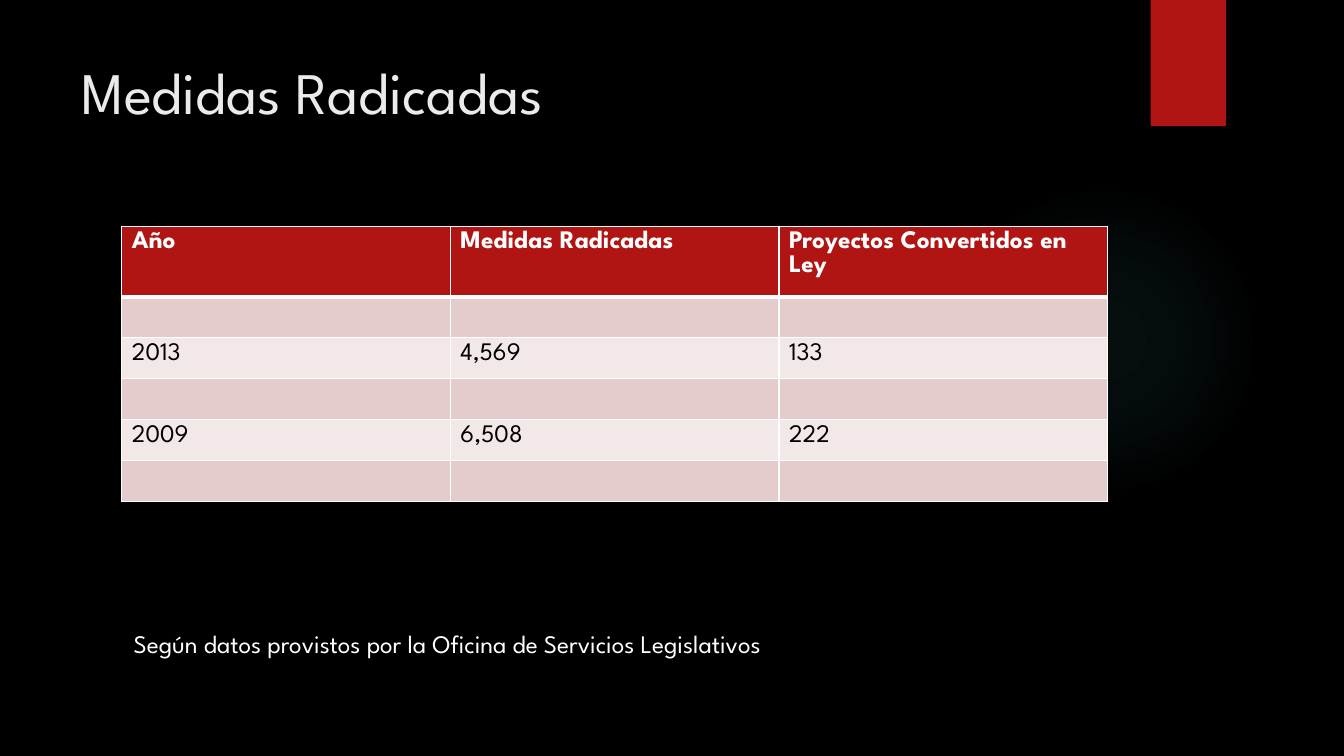
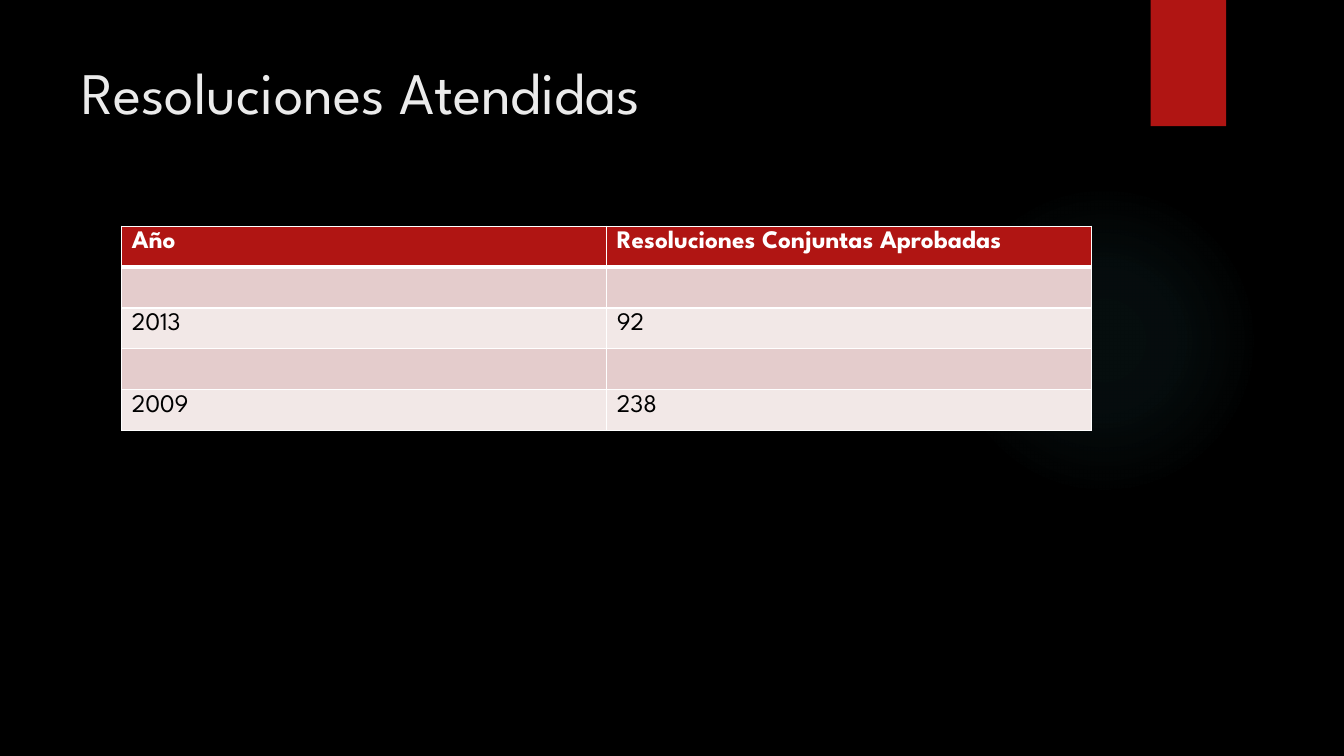
from dataclasses import dataclass

from lxml.etree import SubElement
from pptx import Presentation
from pptx.dml.color import RGBColor
from pptx.enum.shapes import MSO_SHAPE
from pptx.enum.text import MSO_ANCHOR
from pptx.oxml import parse_xml
from pptx.oxml.ns import nsdecls, qn
from pptx.util import Cm, Pt


@dataclass(frozen=True)
class Theme:
    font: str = "League Spartan"
    title_size: int = 42
    body_size: int = 18
    background: str = "000000"
    accent: str = "B01513"
    glow: str = "50B9C1"
    title: str = "EBEBEB"
    light: str = "FFFFFF"
    dark: str = "000000"
    row_fills: tuple = ("F2E8E7", "E4CCCC")
    thin_rule: int = 1
    header_rule: int = 3


class Deck:
    ROW_HEIGHT = Cm(1.03)

    def __init__(self, theme):
        self.theme = theme
        self.prs = Presentation()
        self.prs.slide_width, self.prs.slide_height = Cm(33.87), Cm(19.05)
        self.slide = None

    def add_slide(self, title):
        """Start a slide with the shared background, glow, band and title."""
        self.slide = self.prs.slides.add_slide(self.prs.slide_layouts[6])
        backdrop = self.slide.background.fill
        backdrop.solid()
        backdrop.fore_color.rgb = RGBColor.from_string(self.theme.background)
        self.glow()
        self.band()
        self.text(title, (1.8, 1.27, 26.14, 3.89), self.theme.title_size,
                  self.theme.title)

    def shape(self, kind, box):
        shape = self.slide.shapes.add_shape(kind, *map(Cm, box))
        shape.shadow.inherit = False
        shape.line.fill.background()
        return shape

    def band(self):
        band = self.shape(MSO_SHAPE.RECTANGLE, (29, 0, 1.9, 3.18))
        band.fill.solid()
        band.fill.fore_color.rgb = RGBColor.from_string(self.theme.accent)

    def glow(self):
        glow = self.shape(MSO_SHAPE.OVAL, (23.91, 4.66, 7.83, 7.83))
        stops = "".join(
            f'<a:gs pos="{position * 1000}"><a:srgbClr val="{self.theme.glow}">'
            f'<a:alpha val="{opacity * 1000}"/></a:srgbClr></a:gs>'
            for position, opacity in ((0, 7), (36, 6), (69, 0)))
        gradient = parse_xml(
            f'<a:gradFill {nsdecls("a")}><a:gsLst>{stops}</a:gsLst>'
            '<a:path path="circle"><a:fillToRect l="50000" t="50000" '
            'r="50000" b="50000"/></a:path></a:gradFill>')
        glow._element.spPr.find(qn("a:prstGeom")).addnext(gradient)

    def run(self, paragraph, text, size, color, bold=False):
        run = paragraph.add_run()
        run.text = text
        run.font.name = self.theme.font
        run.font.size = Pt(size)
        run.font.bold = bold
        run.font.color.rgb = RGBColor.from_string(color)

    def text(self, text, box, size, color):
        frame = self.slide.shapes.add_textbox(*map(Cm, box)).text_frame
        frame.word_wrap = True
        frame.vertical_anchor = MSO_ANCHOR.TOP
        self.run(frame.paragraphs[0], text, size, color)

    def note(self, text):
        self.text(text, (3.12, 15.7, 17.63, 1.8), self.theme.body_size,
                  self.theme.light)

    def borders(self, cell, top, bottom):
        properties = cell._tc.get_or_add_tcPr()
        thin = self.theme.thin_rule
        for side, width in (("L", thin), ("R", thin), ("T", top), ("B", bottom)):
            line = SubElement(properties, qn(f"a:ln{side}"), w=str(Pt(width)))
            fill = SubElement(line, qn("a:solidFill"))
            SubElement(fill, qn("a:srgbClr"), val=self.theme.light)

    def table(self, rows, column_width, height):
        """Draw a header row and banded rows; an empty row is a spacer."""
        theme = self.theme
        columns = len(rows[0])
        frame = self.slide.shapes.add_table(
            len(rows), columns, Cm(3.07), Cm(5.7),
            Cm(column_width) * columns, self.ROW_HEIGHT * len(rows))
        frame.height = Cm(height)
        table = frame.table
        for r, values in enumerate(rows):
            header = r == 0
            top = theme.header_rule if r == 1 else theme.thin_rule
            bottom = theme.header_rule if header else theme.thin_rule
            fill = theme.accent if header else theme.row_fills[r % 2]
            for c in range(columns):
                cell = table.cell(r, c)
                self.borders(cell, top, bottom)
                cell.fill.solid()
                cell.fill.fore_color.rgb = RGBColor.from_string(fill)
                if values:
                    self.run(cell.text_frame.paragraphs[0], values[c],
                             theme.body_size,
                             theme.light if header else theme.dark, header)


def main():
    deck = Deck(Theme())

    # Measures filed and enacted
    deck.add_slide("Medidas Radicadas")
    deck.table([
        ("Año", "Medidas Radicadas", "Proyectos Convertidos en Ley"),
        (),
        ("2013", "4,569", "133"),
        (),
        ("2009", "6,508", "222"),
        (),
    ], column_width=8.28, height=6.93)
    deck.note("Según datos provistos por la Oficina de Servicios Legislativos")

    # Joint resolutions
    deck.add_slide("Resoluciones Atendidas")
    deck.table([
        ("Año", "Resoluciones Conjuntas Aprobadas"),
        (),
        ("2013", "92"),
        (),
        ("2009", "238"),
    ], column_width=12.22, height=5.15)

    deck.prs.save("out.pptx")


if __name__ == "__main__":
    main()
